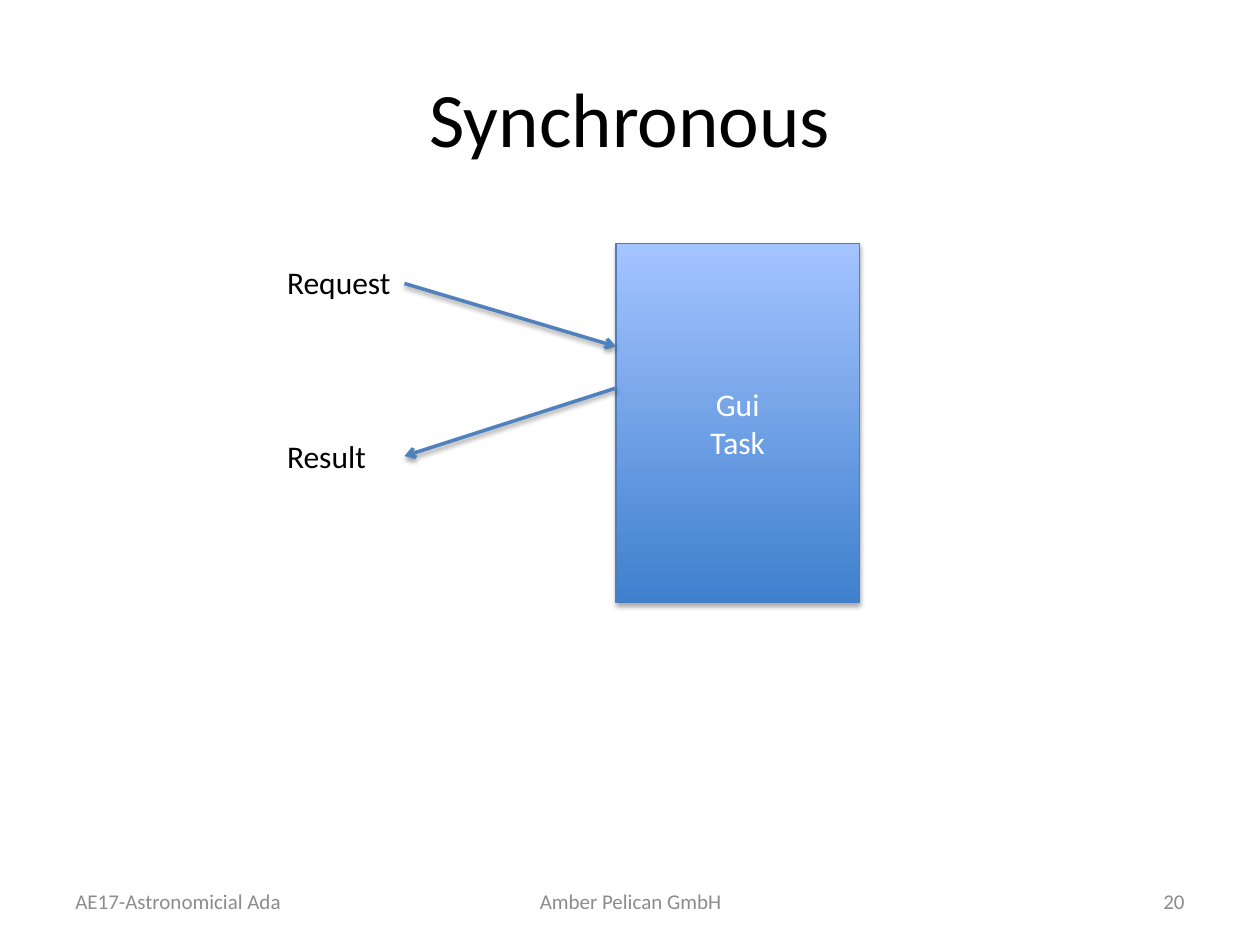
"""Build the slide showing a synchronous request to the GUI task."""
import pptx
import pptx.dml.color
import pptx.enum.shapes
import pptx.enum.text
import pptx.oxml
import pptx.oxml.ns
import pptx.util

Inches = pptx.util.Inches
Pt = pptx.util.Pt
RGBColor = pptx.dml.color.RGBColor
ALIGN = pptx.enum.text.PP_ALIGN
ANCHOR = pptx.enum.text.MSO_ANCHOR

BLACK = RGBColor(0x00, 0x00, 0x00)
WHITE = RGBColor(0xFF, 0xFF, 0xFF)
GREY = RGBColor(0x8C, 0x8C, 0x8C)
ARROW_BLUE = RGBColor(0x4F, 0x81, 0xBD)
OUTLINE_BLUE = RGBColor(0x4B, 0x7E, 0xBC)
TASK_DARK = RGBColor(0x3F, 0x80, 0xCE)
TASK_LIGHT = RGBColor(0xA4, 0xC4, 0xFF)

TITLE_FONT = {"name": "Calibri", "size": Pt(44)}
BODY_FONT = {"name": "Calibri", "size": Pt(18)}
FOOTER_FONT = {"name": "Calibri", "size": Pt(12)}

TASK_LEFT = 4.89
ARROW_LEFT = 3.21
LABEL_LEFT = 2.18
FOOTER_TOP = 6.95


def write_text(shape, lines, font, color, align=ALIGN.LEFT, anchor=ANCHOR.MIDDLE):
    """Write one paragraph per line with a shared format."""
    frame = shape.text_frame
    frame.word_wrap = True
    frame.vertical_anchor = anchor
    frame.text = "\n".join(lines)
    for paragraph in frame.paragraphs:
        paragraph.alignment = align
        for name, value in font.items():
            setattr(paragraph.runs[0].font, name, value)
        paragraph.runs[0].font.color.rgb = color


def add_text(slide, box, text, font, color, **layout):
    """Add a text box holding a single line."""
    shape = slide.shapes.add_textbox(*map(Inches, box))
    write_text(shape, [text], font, color, **layout)


def add_shadow(shape, distance, opacity):
    """Give a shape or connector a soft shadow that falls downwards."""
    shape._element.spPr.append(pptx.oxml.parse_xml(
        f'<a:effectLst {pptx.oxml.ns.nsdecls("a")}>'
        f'<a:outerShdw blurRad="{Pt(3.1)}" dist="{Pt(distance)}" dir="5400000" rotWithShape="0">'
        f'<a:srgbClr val="000000"><a:alpha val="{opacity * 1000}"/></a:srgbClr>'
        '</a:outerShdw></a:effectLst>'))


def add_task(slide, box, lines):
    """Add the gradient rectangle that stands for a task."""
    shape = slide.shapes.add_shape(
        pptx.enum.shapes.MSO_SHAPE.RECTANGLE, *map(Inches, box))
    shape.fill.gradient()
    shape.fill.gradient_angle = 90
    for stop, position, color in zip(
            shape.fill.gradient_stops, (0, 1), (TASK_DARK, TASK_LIGHT)):
        stop.position = position
        stop.color.rgb = color
    shape.line.color.rgb = OUTLINE_BLUE
    shape.line.width = Pt(0.75)
    add_shadow(shape, 1.8, 35)
    write_text(shape, lines, BODY_FONT, WHITE, ALIGN.CENTER)


def add_arrow(slide, start, end):
    """Add a straight arrow pointing at its end."""
    arrow = slide.shapes.add_connector(
        pptx.enum.shapes.MSO_CONNECTOR.STRAIGHT, *map(Inches, start + end))
    arrow.line.color.rgb = ARROW_BLUE
    arrow.line.width = Pt(2)
    arrow.line._get_or_add_ln().append(pptx.oxml.parse_xml(
        f'<a:tailEnd {pptx.oxml.ns.nsdecls("a")} type="arrow"/>'))
    add_shadow(arrow, 1.6, 38)


def main():
    """Build and save the presentation."""
    presentation = pptx.Presentation()
    presentation.slide_width = Inches(10)
    presentation.slide_height = Inches(7.5)
    slide = presentation.slides.add_slide(presentation.slide_layouts[6])

    add_text(slide, (0.5, 0.3, 9, 1.25), "Synchronous", TITLE_FONT, BLACK,
             align=ALIGN.CENTER)
    for left, width, text, align in (
            (0.5, 2.33, "AE17-Astronomicial Ada", ALIGN.LEFT),
            (3.42, 3.17, "Amber Pelican GmbH", ALIGN.CENTER),
            (7.17, 2.33, "20", ALIGN.RIGHT)):
        add_text(slide, (left, FOOTER_TOP, width, 0.4), text, FOOTER_FONT, GREY,
                 align=align)

    add_task(slide, (TASK_LEFT, 1.93, 1.93, 2.85), ["Gui", "Task"])
    add_arrow(slide, (ARROW_LEFT, 2.25), (TASK_LEFT, 2.75))
    add_arrow(slide, (TASK_LEFT, 3.08), (ARROW_LEFT, 3.62))
    for top, text in ((2.04, "Request"), (3.42, "Result")):
        add_text(slide, (LABEL_LEFT, top, 1.05, 0.4), text, BODY_FONT, BLACK,
                 anchor=ANCHOR.TOP)

    presentation.save("out.pptx")


if __name__ == "__main__":
    main()
